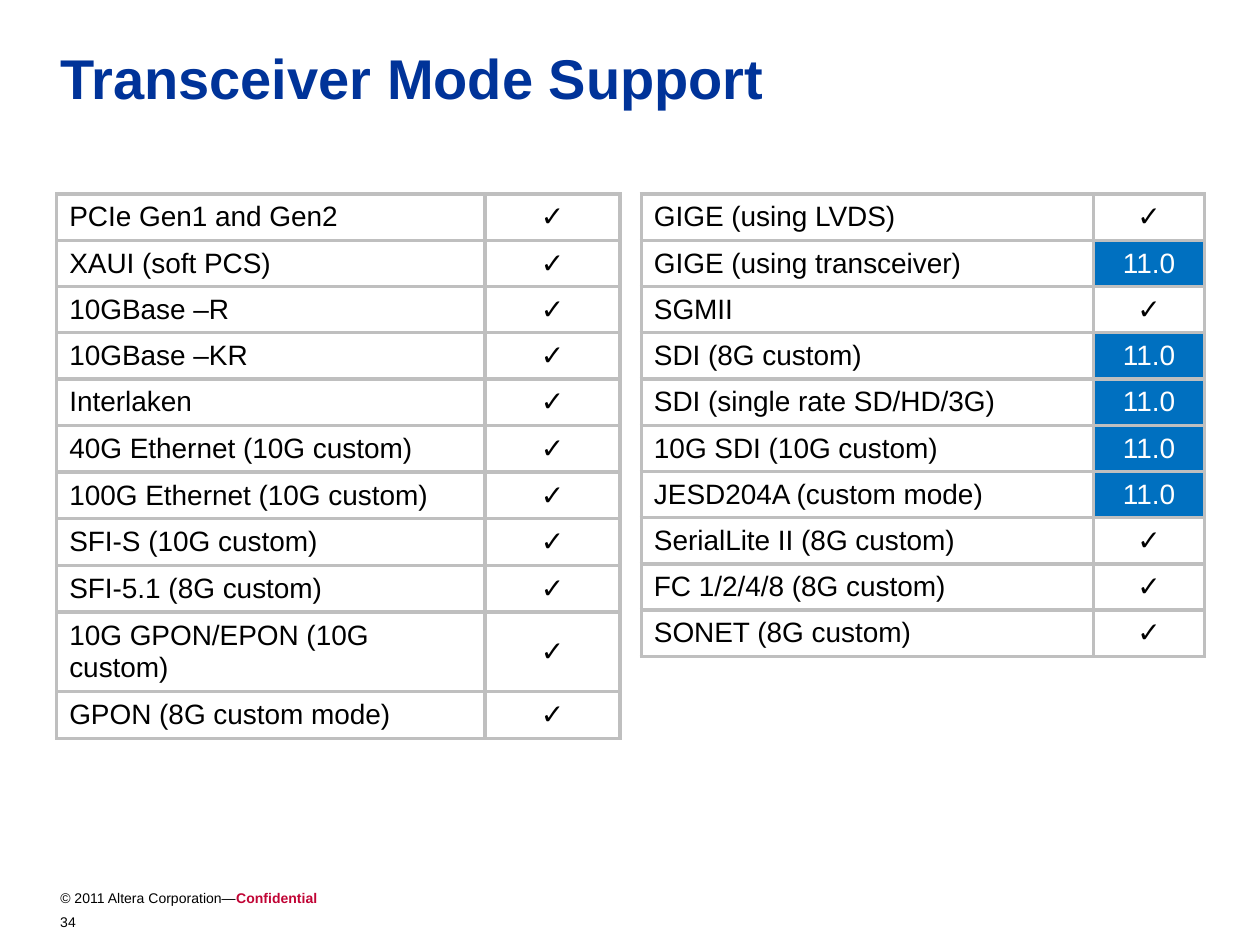
import pptx
import pptx.dml.color
import pptx.enum.text
import pptx.oxml.ns
import pptx.util
from lxml import etree

Inches = pptx.util.Inches
Pt = pptx.util.Pt

COLORS = {"title": "003399", "text": "000000", "confidential": "C10435",
          "cell": "FFFFFF", "release": "0070C0", "release_text": "FFFFFF",
          "border": "BFBFBF"}
FONT = "Arial"
SUPPORTED = "✓"
RELEASE = "11.0"

TITLE = "Transceiver Mode Support"
COPYRIGHT = "© 2011 Altera Corporation—"
CONFIDENTIAL = "Confidential"
PAGE_NUMBER = "34"

SERIAL_MODES = [
    ("PCIe Gen1 and Gen2", SUPPORTED),
    ("XAUI (soft PCS)", SUPPORTED),
    ("10GBase –R", SUPPORTED),
    ("10GBase –KR", SUPPORTED),
    ("Interlaken", SUPPORTED),
    ("40G Ethernet (10G custom)", SUPPORTED),
    ("100G Ethernet (10G custom)", SUPPORTED),
    ("SFI-S (10G custom)", SUPPORTED),
    ("SFI-5.1 (8G custom)", SUPPORTED),
    ("10G GPON/EPON (10G custom)", SUPPORTED),
    ("GPON (8G custom mode)", SUPPORTED),
]
VIDEO_MODES = [
    ("GIGE (using LVDS)", SUPPORTED),
    ("GIGE (using transceiver)", RELEASE),
    ("SGMII", SUPPORTED),
    ("SDI (8G custom)", RELEASE),
    ("SDI (single rate SD/HD/3G)", RELEASE),
    ("10G SDI (10G custom)", RELEASE),
    ("JESD204A (custom mode)", RELEASE),
    ("SerialLite II (8G custom)", SUPPORTED),
    ("FC 1/2/4/8 (8G custom)", SUPPORTED),
    ("SONET (8G custom)", SUPPORTED),
]
TABLES = [
    (0.45, (3.4, 1.07), [0.36] * 4 + [0.37] * 7, SERIAL_MODES),
    (5.09, (3.59, 0.88), [3.67 / len(VIDEO_MODES)] * len(VIDEO_MODES), VIDEO_MODES),
]
TABLE_TOP = 1.54


def rgb(name):
    return pptx.dml.color.RGBColor.from_string(COLORS[name])


def add_run(paragraph, text, size, color, bold=False):
    run = paragraph.add_run()
    run.text = text
    run.font.name = FONT
    run.font.size = Pt(size)
    run.font.bold = bold
    run.font.color.rgb = rgb(color)


def add_text(slide, bounds, runs):
    box = slide.shapes.add_textbox(*map(Inches, bounds))
    box.text_frame.word_wrap = True
    box.text_frame.vertical_anchor = pptx.enum.text.MSO_ANCHOR.TOP
    for run in runs:
        add_run(box.text_frame.paragraphs[0], *run)


def add_borders(cell):
    properties = cell._tc.get_or_add_tcPr()
    for position, side in enumerate(("a:lnL", "a:lnR", "a:lnT", "a:lnB")):
        line = etree.Element(pptx.oxml.ns.qn(side), w=str(Pt(2.25)))
        fill = etree.SubElement(line, pptx.oxml.ns.qn("a:solidFill"))
        etree.SubElement(fill, pptx.oxml.ns.qn("a:srgbClr"), val=COLORS["border"])
        properties.insert(position, line)


def fill_cell(cell, text, centered):
    is_release = text == RELEASE
    cell.vertical_anchor = pptx.enum.text.MSO_ANCHOR.MIDDLE
    cell.margin_left = cell.margin_right = Inches(0.1)
    cell.margin_top = cell.margin_bottom = Inches(0.05)
    cell.fill.solid()
    cell.fill.fore_color.rgb = rgb("release" if is_release else "cell")
    add_borders(cell)
    paragraph = cell.text_frame.paragraphs[0]
    if centered:
        paragraph.alignment = pptx.enum.text.PP_ALIGN.CENTER
    add_run(paragraph, text, 16, "release_text" if is_release else "text")


def add_mode_table(slide, left, widths, heights, modes):
    table = slide.shapes.add_table(
        len(modes), len(widths), Inches(left), Inches(TABLE_TOP),
        Inches(sum(widths)), Inches(sum(heights))).table
    table.first_row = False
    table.horz_banding = False
    for column, width in zip(table.columns, widths):
        column.width = Inches(width)
    for row, height, mode in zip(table.rows, heights, modes):
        row.height = Inches(height)
        for position, text in enumerate(mode):
            fill_cell(row.cells[position], text, position == 1)


def main():
    deck = pptx.Presentation()
    deck.slide_width, deck.slide_height = Inches(10), Inches(7.5)
    slide = deck.slides.add_slide(deck.slide_layouts[6])
    add_text(slide, (0.38, 7.01, 4.65, 0.42),
             [(COPYRIGHT, 8, "text"), (CONFIDENTIAL, 8, "confidential", True)])
    add_text(slide, (0.38, 0.3, 9.11, 1), [(TITLE, 32, "title", True)])
    for mode_table in TABLES:
        add_mode_table(slide, *mode_table)
    add_text(slide, (0.38, 7.2, 0.76, 0.31), [(PAGE_NUMBER, 8, "text")])
    deck.save("out.pptx")


if __name__ == "__main__":
    main()
